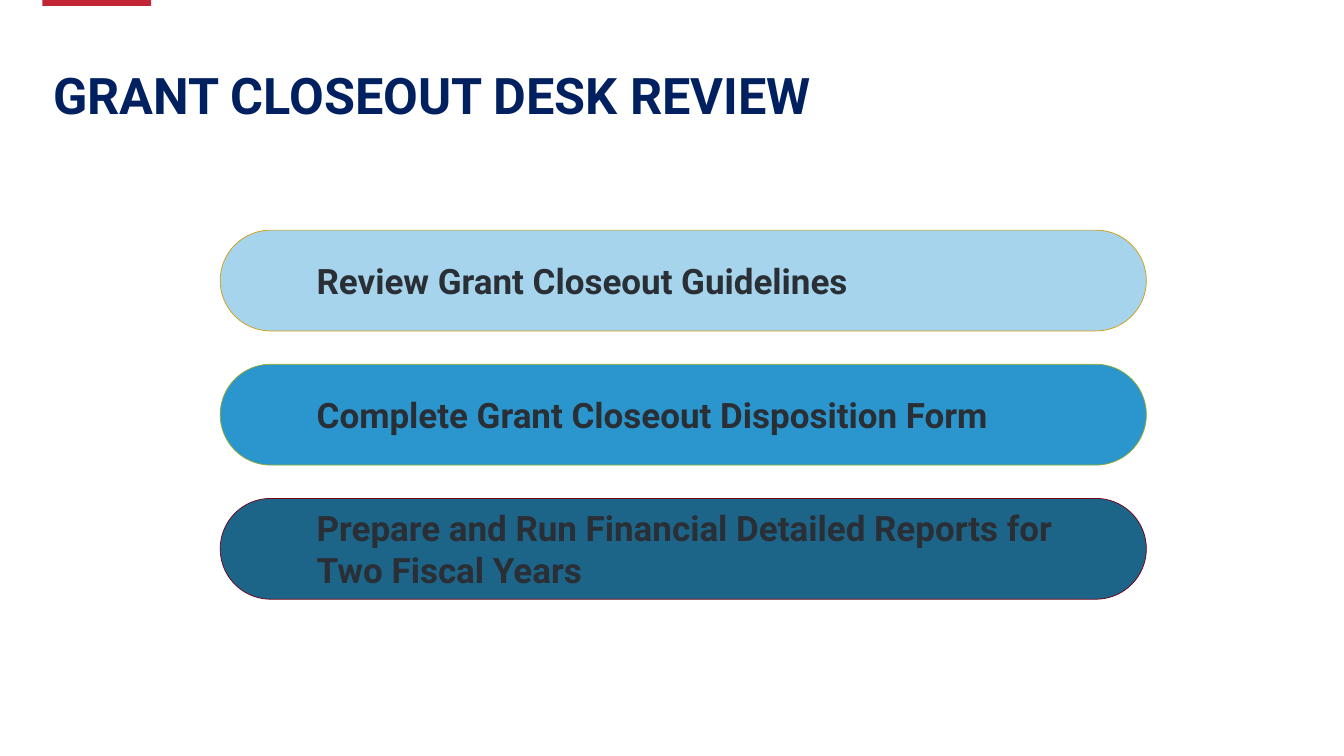
from pptx import Presentation
from pptx import util as u
from pptx.dml.color import RGBColor
from pptx.enum import shapes, text

COLOURS = {
    "accent": "C12637",
    "title": "002060",
    "ink": "2A2F36",
}
STEPS = [
    # wording, fill, outline
    ("Review Grant Closeout Guidelines", "A6D4EC", "D19D10"),
    ("Complete Grant Closeout Disposition Form", "2B96CD", "93AD2B"),
    ("Prepare and Run Financial Detailed Reports for Two Fiscal Years", "1D6489", "700017"),
]


def write(frame, wording, *, size, colour, margins, spacing=1.0, indent=0):
    """Put one bold, left-aligned paragraph in the frame; margins and indent in cm."""
    frame.word_wrap = True
    frame.auto_size = text.MSO_AUTO_SIZE.NONE
    frame.vertical_anchor = text.MSO_ANCHOR.MIDDLE
    (frame.margin_left, frame.margin_top,
     frame.margin_right, frame.margin_bottom) = map(u.Cm, margins)
    paragraph = frame.paragraphs[0]
    paragraph.alignment = text.PP_ALIGN.LEFT
    paragraph.line_spacing = spacing
    if indent:
        properties = paragraph._p.get_or_add_pPr()
        properties.set("marL", str(u.Cm(indent)))
        properties.set("indent", "0")
    run = paragraph.add_run()
    run.text = wording
    run.font.name = "Roboto"
    run.font.size = u.Pt(size)
    run.font.bold = True
    run.font.color.rgb = RGBColor.from_string(colour)


def add_block(slide, preset, box, fill, outline=None):
    block = slide.shapes.add_shape(preset, *map(u.Cm, box))
    block.shadow.inherit = False
    block.fill.solid()
    block.fill.fore_color.rgb = RGBColor.from_string(fill)
    if outline:
        block.line.color.rgb = RGBColor.from_string(outline)
        block.line.width = u.Pt(0.5)
    else:
        block.line.fill.background()
    return block


def add_header(slide, left, top, width, height):
    add_block(slide, shapes.MSO_SHAPE.RECTANGLE,
              (left - 0.02, -0.1, 2.74, 0.25), COLOURS["accent"])
    title = slide.shapes.title
    title.left, title.top = u.Cm(left), u.Cm(top)
    title.width, title.height = u.Cm(width), u.Cm(height)
    write(title.text_frame, "GRANT CLOSEOUT DESK REVIEW", size=36,
          colour=COLOURS["title"], margins=(0.25, 0.13, 0.25, 0.13), spacing=0.9)


def add_steps(slide, left, top, width, height, gap=0.84):
    """Stack the steps as equal pills that fill the box."""
    pill_height = (height - gap * (len(STEPS) - 1)) / len(STEPS)
    for row, (wording, fill, outline) in enumerate(STEPS):
        pill_top = top + row * (pill_height + gap)
        pill = add_block(slide, shapes.MSO_SHAPE.ROUNDED_RECTANGLE,
                         (left, pill_top, width, pill_height), fill, outline)
        pill.adjustments[0] = 0.5
        write(pill.text_frame, wording, size=25, colour=COLOURS["ink"],
              margins=(0.79, 0.08, 0.15, 0.08), indent=1.27)


def main():
    deck = Presentation()
    deck.slide_width, deck.slide_height = u.Cm(33.87), u.Cm(19.05)
    slide = deck.slides.add_slide(deck.slide_layouts.get_by_name("Title Only"))
    add_header(slide, 1.09, 1.57, 22.86, 1.8)
    add_steps(slide, 5.55, 5.8, 23.34, 9.3)
    deck.save("out.pptx")


if __name__ == "__main__":
    main()
